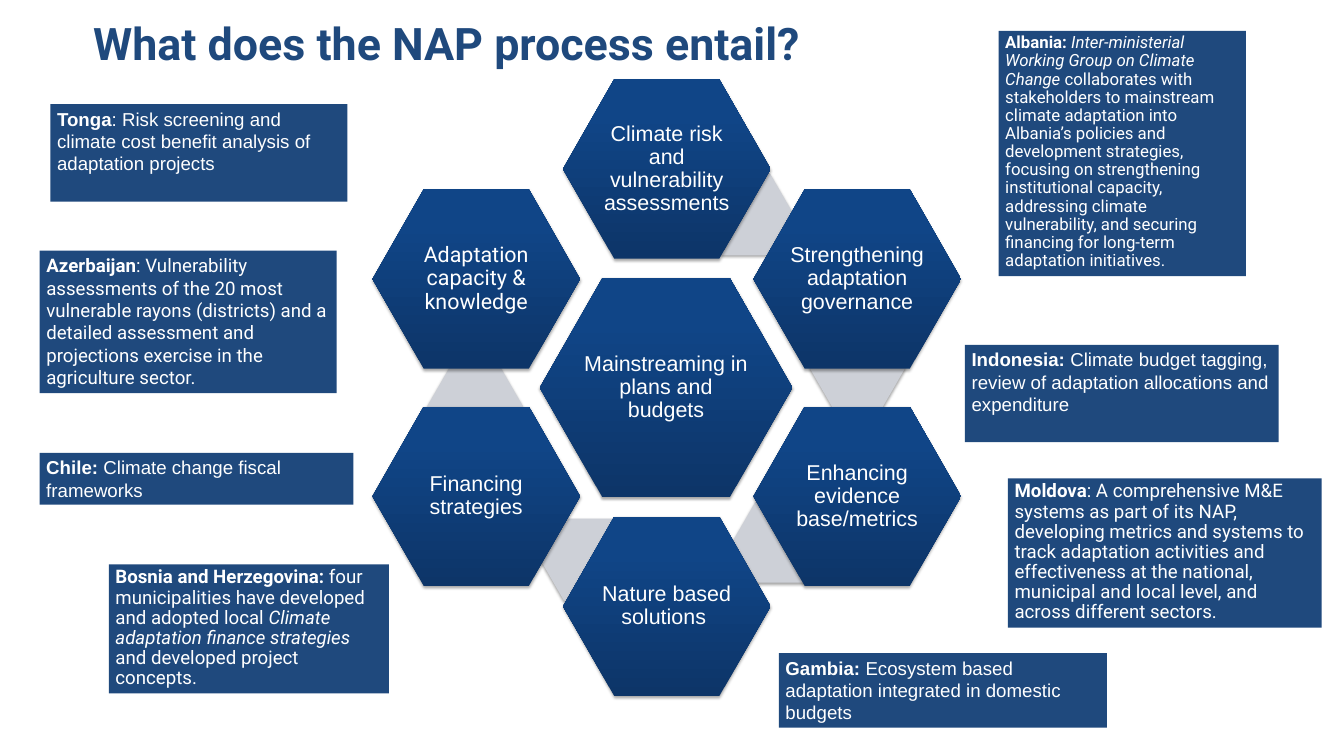
from copy import deepcopy

from lxml import etree
from pptx import Presentation
from pptx.dml.color import RGBColor
from pptx.enum.shapes import MSO_SHAPE
from pptx.enum.text import MSO_ANCHOR, MSO_AUTO_SIZE, PP_ALIGN
from pptx.oxml.ns import qn
from pptx.util import Pt

HEXAGON, RECTANGLE = MSO_SHAPE.HEXAGON, MSO_SHAPE.RECTANGLE
TOP, MIDDLE = MSO_ANCHOR.TOP, MSO_ANCHOR.MIDDLE
CENTER, LEFT = PP_ALIGN.CENTER, PP_ALIGN.LEFT
GROW, FIXED = MSO_AUTO_SIZE.SHAPE_TO_FIT_TEXT, MSO_AUTO_SIZE.NONE

NAVY, WHITE, LINK_GREY = "1F497D", "FFFFFF", "CDD0D7"
GRADIENT = [(0, "0D3568"), (0.8, "104587"), (1, "0E458A")]

# Content
TITLE = "What does the NAP process entail? "
CORE = "Mainstreaming in plans and budgets"

# Ring steps: text, font, column (-1 to 1), offset from the centre,
# left and top of the grey link behind the step
OUTER, INNER = 234.3, 116.4
RING = [
    ("Climate risk and vulnerability assessments", "Arial", 0, -OUTER, (748.1, 185.8)),
    ("Strengthening adaptation governance", "Arial", 1, -INNER, (867.6, 350.6)),
    ("Enhancing evidence base/metrics", "Arial", 1, INNER, (784.8, 536.4)),
    ("Nature based solutions ", "Arial", 0, OUTER, (578.9, 555.8)),
    ("Financing strategies", "Arial", -1, INNER, (457.9, 391)),
    ("Adaptation capacity & knowledge", "Roboto", -1, -INNER, None),
]

# Country examples: box, font, size, line spacing, runs of (text, style)
COUNTRIES = [
    ((834.5, 699.8, 351.4, 79.9), "Arial", 20, 1, [
        ("Gambia: ", "b"),
        ("Ecosystem based adaptation integrated in domestic budgets", "")]),
    ((1033.9, 369.4, 336.2, 104.4), "Arial", 20, 1, [
        ("Indonesia: ", "b"),
        ("Climate budget tagging, review of adaptation allocations and expenditure", "")]),
    ((54, 111.6, 318.2, 104.4), "Arial", 20, 1, [
        ("Tonga", "b"),
        (": Risk screening and climate cost benefit analysis of adaptation projects", "")]),
    ((116.6, 604.8, 300.2, 138.2), "Roboto", 20, 0.9, [
        ("Bosnia and Herzegovina:", "b"),
        (" four municipalities have developed and adopted local ", ""),
        ("Climate adaptation finance strategies ", "i"),
        ("and developed project concepts.", "")]),
    ((1080, 512.6, 336.2, 159.8), "Roboto", 20, 0.9, [
        ("Moldova", "b"),
        (": A comprehensive M&E systems as part of its NAP, developing metrics and "
         "systems to track adaptation activities and effectiveness at the national, "
         "municipal and local level, and across different sectors.", "")]),
    ((42.5, 485.3, 336.2, 55.4), "Arial", 20, 1, [
        ("Chile: ", "b"),
        ("Climate change fiscal frameworks", "")]),
    ((42.5, 268.6, 318.2, 152.6), "Roboto", 20, 1, [
        ("Azerbaijan", "b"),
        (": Vulnerability assessments of the 20 most vulnerable rayons (districts) and "
         "a detailed assessment and projections exercise in the agriculture sector.", "")]),
    ((1069.9, 33.1, 265, 262.8), "Roboto", 18, 0.9, [
        ("Albania: ", "b"),
        ("Inter-ministerial Working Group on Climate Change ", "i"),
        ("collaborates with stakeholders to mainstream climate adaptation into "
         "Albania’s policies and development strategies, focusing on strengthening "
         "institutional capacity, addressing climate vulnerability, and securing "
         "financing for long-term adaptation initiatives.", "")]),
]

# Layout
CENTER_X, CENTER_Y, COLUMN_STEP = 714.4, 415.4, 204.1
CORE_SIZE, STEP_SIZE, LINK_SIZE = (270.7, 234.7), (222.5, 192.2), (102.2, 87.8)


def rgb(color):
    return RGBColor.from_string(color)


def add_box(kind, left, top, width, height, color):
    box = slide.shapes.add_shape(kind, Pt(left), Pt(top), Pt(width), Pt(height))
    box.shadow.inherit = False
    box.line.fill.background()
    box.fill.solid()
    box.fill.fore_color.rgb = rgb(color)
    return box


def write(shape, runs, font, size, color, spacing, align, anchor, autosize, margins):
    frame = shape.text_frame
    frame.word_wrap = True
    frame.auto_size = autosize
    frame.vertical_anchor = anchor
    frame.margin_left = frame.margin_right = Pt(margins[0])
    frame.margin_top = frame.margin_bottom = Pt(margins[1])
    paragraph = frame.paragraphs[0]
    paragraph.alignment = align
    paragraph.line_spacing = spacing
    paragraph.font.name = font
    paragraph.font.size = Pt(size)
    paragraph.font.color.rgb = rgb(color)
    for text, style in runs:
        run = paragraph.add_run()
        run.text = text
        run.font.bold = style == "b"
        run.font.italic = style == "i"


def add_shadow(shape):
    effects = shape._element.spPr.find(qn("a:effectLst"))
    shadow = etree.SubElement(effects, qn("a:outerShdw"), blurRad=str(Pt(3.1)),
                              dist=str(Pt(1.8)), dir="5400000", rotWithShape="0")
    black = etree.SubElement(shadow, qn("a:srgbClr"), val="000000")
    etree.SubElement(black, qn("a:alpha"), val="35000")


def add_hexagon(left, top, size, adjustment, color):
    hexagon = add_box(HEXAGON, left, top, *size, color)
    hexagon.adjustments[0] = adjustment
    add_shadow(hexagon)
    return hexagon


def add_step(text, font, center_x, center_y, size):
    width, height = size
    step = add_hexagon(center_x - width / 2, center_y - height / 2, size, 0.286, NAVY)
    step.fill.gradient()
    step.fill.gradient_angle = 90
    stops = step._element.spPr.find(".//" + qn("a:gsLst"))
    stops.append(deepcopy(stops[-1]))
    for stop, (position, color) in zip(step.fill.gradient_stops, GRADIENT):
        stop.position = position
        stop.color.rgb = rgb(color)
    write(step, [(text, "")], font, 23, WHITE, 0.9, CENTER, MIDDLE, FIXED, (2.1, 2.1))


presentation = Presentation()
presentation.slide_width, presentation.slide_height = Pt(1440), Pt(810)
slide = presentation.slides.add_slide(presentation.slide_layouts[5])

# Title
title = slide.shapes.title
title.left, title.top, title.width, title.height = Pt(-97.9), Pt(13.7), Pt(1165), Pt(70.6)
write(title, [(TITLE, "b")], "Roboto", 48, NAVY, 0.9, CENTER, MIDDLE, FIXED, (10.8, 5.4))

# Core and ring of steps
add_step(CORE, "Arial", CENTER_X - 0.7, CENTER_Y, CORE_SIZE)
for text, font, column, offset, link in RING:
    if link:
        add_hexagon(*link, LINK_SIZE, 0.289, LINK_GREY)
    add_step(text, font, CENTER_X + column * COLUMN_STEP, CENTER_Y + offset, STEP_SIZE)

# Country examples
for bounds, font, size, spacing, runs in COUNTRIES:
    example = add_box(RECTANGLE, *bounds, NAVY)
    write(example, runs, font, size, WHITE, spacing, LEFT, TOP, GROW, (7.2, 3.6))

presentation.save("out.pptx")
